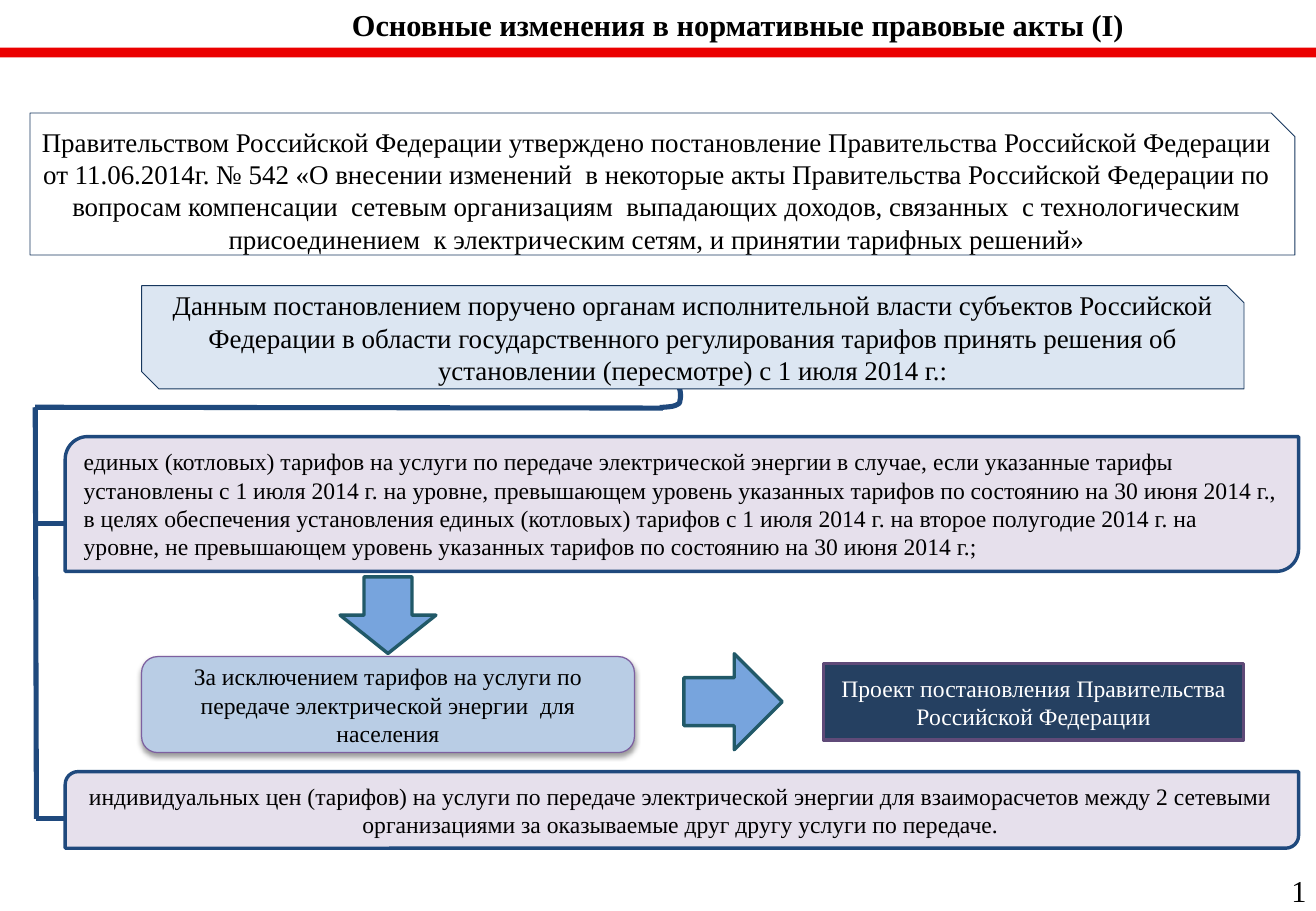
from lxml.etree import SubElement
from pptx import Presentation
from pptx.dml.color import RGBColor
from pptx.enum.shapes import MSO_CONNECTOR, MSO_SHAPE as Form
from pptx.enum.text import MSO_ANCHOR as Anchor, PP_ALIGN as Align
from pptx.oxml.ns import qn
from pptx.util import Pt

BLACK = RGBColor(0, 0, 0)
WHITE = RGBColor(255, 255, 255)
RED = RGBColor(0xEB, 0, 0)
NAVY = RGBColor(0x17, 0x37, 0x5E)
BLUE = RGBColor(0x1F, 0x49, 0x7D)
LILAC = RGBColor(0xE6, 0xE0, 0xEC)
PALE_BLUE = RGBColor(0xDC, 0xE6, 0xF2)
LIGHT_BLUE = RGBColor(0xB9, 0xCD, 0xE5)
VIOLET = RGBColor(0x7D, 0x60, 0xA0)
DARK_BLUE = RGBColor(0x25, 0x40, 0x61)
PLUM = RGBColor(0x5F, 0x4A, 0x78)
ARROW_BLUE = RGBColor(0x55, 0x8E, 0xD5)
TEAL = RGBColor(0x21, 0x59, 0x68)


def add_figure(form, place, fill, line=None, weight=0):
    figure = page.shapes.add_shape(form, *map(Pt, place))
    figure.shadow.inherit = False
    figure.fill.solid()
    figure.fill.fore_color.rgb = fill
    if line is None:
        figure.line.fill.background()
    else:
        figure.line.color.rgb = line
        figure.line.width = Pt(weight)
    return figure


def write(box, text, size, align=Align.CENTER, color=BLACK, bold=False,
          anchor=Anchor.MIDDLE, wrap=True, margins=(7.2, 3.6, 7.2, 3.6)):
    """Fill a box with one paragraph; margins are left, top, right, bottom."""
    frame = box.text_frame
    left, top, right, bottom = map(Pt, margins)
    layout = {"word_wrap": wrap, "vertical_anchor": anchor,
              "margin_left": left, "margin_right": right,
              "margin_top": top, "margin_bottom": bottom}
    for name, value in layout.items():
        setattr(frame, name, value)
    para = frame.paragraphs[0]
    para.alignment = align
    span = para.add_run()
    span.text = text
    span.font.color.rgb = color
    for name, value in {"name": "Times New Roman", "size": Pt(size), "bold": bold}.items():
        setattr(span.font, name, value)


deck = Presentation()
deck.slide_width = Pt(780.48)
deck.slide_height = Pt(540)
page = deck.slides.add_slide(deck.slide_layouts[6])

# Header and page number
add_figure(Form.RECTANGLE, (0, 28.2, 780.48, 5.8), RED)
title = page.shapes.add_textbox(*map(Pt, (95.2, 0, 685, 28.8)))
write(title, "Основные изменения в нормативные правовые акты (I)", 18,
      bold=True, anchor=Anchor.TOP)
number = page.shapes.add_textbox(*map(Pt, (758.9, 513.4, 23.8, 28.8)))
write(number, "1", 18, align=Align.LEFT, anchor=Anchor.TOP, wrap=False)

# Bracket from the instruction to the two kinds of tariffs
bracket_lines = [
    (21.6, 485.4, 49, 485.4),
    (20.9, 310.3, 49, 310.3),
    (393.1, 241.9, 20.9, 241.4),
    (21.6, 485.4, 20.9, 241.4),
]
for ends in bracket_lines:
    connector = page.shapes.add_connector(MSO_CONNECTOR.STRAIGHT, *map(Pt, ends))
    connector.line.color.rgb = BLUE
    connector.line.width = Pt(3)
    SubElement(connector._element.spPr, qn("a:effectLst"))

# Rounded corner of the bracket, sampled from cubic curves
corner_curves = [
    ((391, 241.2), (394.6, 241.2), (398.2, 241.2), (400.3, 240.5)),
    ((400.3, 240.5), (402.5, 239.8), (403.2, 239), (403.2, 237.6)),
    ((403.2, 237.6), (403.9, 236.2), (403.9, 231.8), (403.2, 230.4)),
]
STEPS = 8
corner_points = []
for curve in corner_curves:
    for step in range(1, STEPS + 1):
        t = step / STEPS
        weights = ((1 - t) ** 3, 3 * t * (1 - t) ** 2, 3 * t * t * (1 - t), t ** 3)
        corner_points.append(tuple(
            Pt(sum(w * point[axis] for w, point in zip(weights, curve)))
            for axis in (0, 1)))
builder = page.shapes.build_freeform(*map(Pt, corner_curves[0][0]))
builder.add_line_segments(corner_points, close=False)
corner = builder.convert_to_shape()
corner.shadow.inherit = False
corner.fill.background()
corner.line.color.rgb = BLUE
corner.line.width = Pt(3)
corner.rotation = 356.8

# Decree and instruction
decree = add_figure(Form.SNIP_1_RECTANGLE, (17.8, 67, 750.2, 84.2), WHITE, NAVY, 0.5)
write(decree,
      "Правительством Российской Федерации утверждено постановление Правительства "
      "Российской Федерации от 11.06.2014г. № 542 «О внесении изменений  в некоторые акты "
      "Правительства Российской Федерации по вопросам компенсации  сетевым организациям  "
      "выпадающих доходов, связанных  с технологическим присоединением  к электрическим "
      "сетям, и принятии тарифных решений»", 16, margins=(0, 0, 0, 0))
instruction = add_figure(Form.SNIP_2_DIAG_RECTANGLE, (84, 169.3, 653.8, 61.2),
                         PALE_BLUE, NAVY, 0.5)
write(instruction,
      "Данным постановлением поручено органам исполнительной власти субъектов Российской "
      "Федерации в области государственного регулирования тарифов принять решения об "
      "установлении (пересмотре) с 1 июля 2014 г.:", 16, margins=(0, 0, 0, 0))

# Two kinds of tariffs
tariffs = [
    (258.8, 79.9, Align.LEFT,
     "единых (котловых) тарифов на услуги по передаче электрической энергии в случае, если "
     "указанные тарифы установлены с 1 июля 2014 г. на уровне, превышающем уровень указанных "
     "тарифов по состоянию на 30 июня 2014 г., в целях обеспечения установления единых "
     "(котловых) тарифов с 1 июля 2014 г. на второе полугодие 2014 г. на уровне, не "
     "превышающем уровень указанных тарифов по состоянию на 30 июня 2014 г.;"),
    (457.4, 45.4, Align.CENTER,
     "индивидуальных цен (тарифов) на услуги по передаче электрической энергии для "
     "взаиморасчетов между 2 сетевыми организациями за оказываемые друг другу услуги "
     "по передаче."),
]
for top, height, align, text in tariffs:
    tariff = add_figure(Form.ROUND_2_DIAG_RECTANGLE, (38.7, top, 731.5, height),
                        LILAC, BLUE, 2)
    write(tariff, text, 14, align=align, margins=(7.2, 3.6, 8.6, 3.6))

# Exception and the draft that follows from it
exception = add_figure(Form.FLOWCHART_ALTERNATE_PROCESS, (84, 389.2, 292.3, 56.9),
                       LIGHT_BLUE, VIOLET, 0.75)
write(exception, "За исключением тарифов на услуги по передаче электрической энергии  "
      "для населения", 14)
effects = exception._element.spPr.find(qn("a:effectLst"))
shadow = SubElement(effects, qn("a:outerShdw"), blurRad=str(Pt(3.1)), dist=str(Pt(1.6)),
                    dir="5400000", rotWithShape="0")
shade = SubElement(shadow, qn("a:srgbClr"), val=str(BLACK))
SubElement(shade, qn("a:alpha"), val="38000")

draft = add_figure(Form.RECTANGLE, (488.5, 393.3, 249.1, 45.4), DARK_BLUE, PLUM, 2)
write(draft, "Проект постановления Правительства Российской Федерации", 14, color=WHITE)

for place, turn in (((405.6, 387.5, 58.3, 56.9), 0), ((207.4, 336.2, 45.4, 56.9), 90)):
    arrow = add_figure(Form.RIGHT_ARROW, place, ARROW_BLUE, TEAL, 2)
    arrow.rotation = turn
    tint = arrow._element.spPr.find(qn("a:solidFill")).find(qn("a:srgbClr"))
    SubElement(tint, qn("a:alpha"), val="80000")

deck.save("out.pptx")
